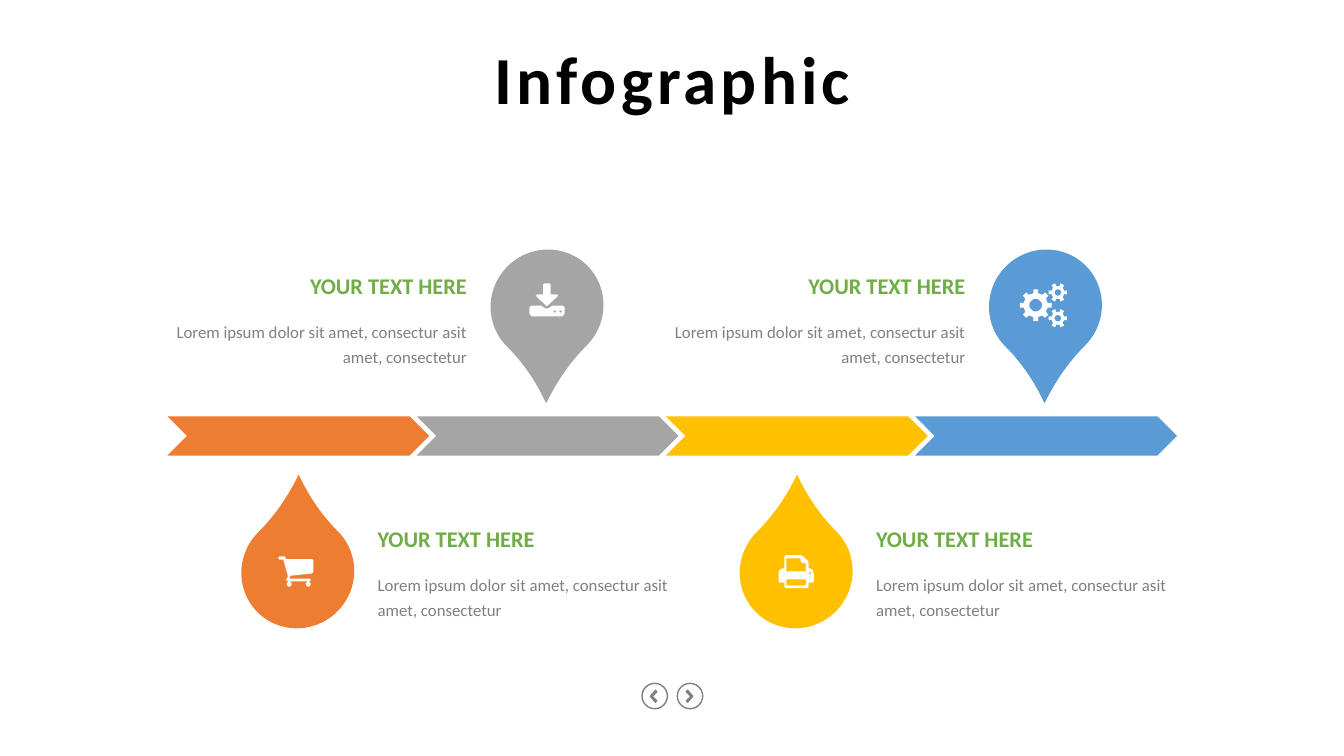
from dataclasses import dataclass
from math import cos, pi, sin

from pptx import Presentation
from pptx.dml.color import RGBColor
from pptx.enum.shapes import MSO_SHAPE
from pptx.enum.text import MSO_ANCHOR, MSO_AUTO_SIZE, PP_ALIGN
from pptx.util import Cm, Pt

CHEVRON, TEARDROP, OVAL = MSO_SHAPE.CHEVRON, MSO_SHAPE.TEAR, MSO_SHAPE.OVAL
LEFT, CENTER, RIGHT = PP_ALIGN.LEFT, PP_ALIGN.CENTER, PP_ALIGN.RIGHT
TOP = MSO_ANCHOR.TOP
NO_AUTOFIT = MSO_AUTO_SIZE.NONE
TITLE_ONLY = 5


@dataclass(frozen=True)
class Theme:
    font: str = "Calibri"
    title: str = "000000"
    heading: str = "70AD47"
    body: str = "808080"
    icon: str = "FFFFFF"
    steps: tuple = ("ED7D31", "A5A5A5", "FFC000", "5B9BD5")
    title_size: int = 48
    heading_size: int = 16
    body_size: int = 12


THEME = Theme()
STEP_PITCH = 6.28
HEADING = "YOUR TEXT HERE"
BODY = "Lorem ipsum dolor sit amet, consectur asit amet, consectetur"


# Icon outlines, in hundredths of a centimetre
def circle(x, y, radius, count=32):
    angles = [2 * pi * i / count for i in range(count)]
    return [(x + radius * cos(a), y + radius * sin(a)) for a in angles]


def gear(x, y, teeth, tip, root):
    profile = ((-0.25, root), (-0.2, tip), (0.2, tip), (0.25, root))
    pitch = 2 * pi / teeth
    return [(x + radius * cos((tooth + offset) * pitch),
             y + radius * sin((tooth + offset) * pitch))
            for tooth in range(teeth) for offset, radius in profile]


CART = [
    [(89, 38), (86, 43), (30, 49), (30, 54), (28, 56), (79, 56), (83, 59),
     (79, 63), (25, 63), (20, 59), (25, 51), (13, 8), (3, 8), (0, 4),
     (3, 0), (17, 0), (20, 7), (86, 7), (89, 10)],
    circle(28, 70, 6), circle(76, 70, 6),
]
DOWNLOAD = [
    [(89, 61), (89, 76), (84, 83), (5, 83), (0, 76), (0, 61), (5, 56),
     (30, 56), (38, 62), (44, 64), (50, 62), (58, 56), (84, 56)],
    [(71, 33), (45, 57), (43, 57), (18, 33), (16, 30), (20, 28), (35, 28),
     (35, 3), (38, 0), (51, 0), (54, 3), (54, 28), (69, 28), (72, 30)],
    circle(64, 71, 3), circle(79, 71, 3),
]
PRINTER = [
    [(0, 66), (0, 46), (3, 37), (10, 33), (15, 33), (15, 4), (19, 0),
     (56, 0), (63, 4), (73, 13), (76, 20), (76, 33), (79, 33), (86, 37),
     (89, 46), (89, 66), (87, 69), (76, 69), (76, 80), (72, 83), (18, 83),
     (15, 80), (15, 69), (2, 69)],
    [(69, 41), (69, 20), (61, 20), (56, 16), (56, 8), (20, 8), (20, 41)],
    [(20, 61), (69, 61), (69, 76), (20, 76)],
    circle(79, 45, 3),
]
GEARS = [
    gear(40, 55, 8, 40, 31), circle(40, 55, 16),
    gear(96, 23, 6, 24, 17), circle(96, 23, 8),
    gear(96, 88, 6, 24, 17), circle(96, 88, 8),
]
NEXT = [[(7, 33), (5, 33), (1, 28), (1, 27), (12, 17), (1, 6), (1, 4),
         (5, 0), (7, 0), (20, 15), (20, 18)]]
PREVIOUS = [[(20 - x, y) for x, y in NEXT[0]]]

# Outline and offset from the drop's left and top, one per step
STEP_ICONS = ((CART, 0.94, 1.02), (DOWNLOAD, 0.99, 0.84),
              (PRINTER, 0.99, 0.99), (GEARS, 0.79, 0.84))


def paint(shape, color):
    shape.shadow.inherit = False
    shape.fill.solid()
    shape.fill.fore_color.rgb = RGBColor.from_string(color)
    shape.line.fill.background()


def add_preset(page, preset, left, top, width, height, color):
    shape = page.shapes.add_shape(
        preset, Cm(left), Cm(top), Cm(width), Cm(height))
    paint(shape, color)
    return shape


def add_icon(page, contours, left, top, color):
    builder = page.shapes.build_freeform(*contours[0][0], scale=Cm(0.01))
    builder.add_line_segments(contours[0][1:], close=True)
    for contour in contours[1:]:
        builder.move_to(*contour[0])
        builder.add_line_segments(contour[1:], close=True)
    paint(builder.convert_to_shape(Cm(left), Cm(top)), color)


def write(box, text, size, color, align, bold=False):
    frame = box.text_frame
    frame.margin_left = frame.margin_right = 0
    frame.margin_top = frame.margin_bottom = 0
    frame.word_wrap = True
    frame.auto_size = NO_AUTOFIT
    frame.vertical_anchor = TOP
    para = frame.paragraphs[0]
    para.text = text
    para.alignment = align
    para.font.name = THEME.font
    para.font.size = Pt(size)
    para.font.bold = bold
    para.font.color.rgb = RGBColor.from_string(color)
    return para


def add_title(page, text):
    box = page.shapes.title
    box.left, box.top, box.width, box.height = (
        Cm(11.15), Cm(0.94), Cm(11.61), Cm(2.06))
    para = write(box, text, THEME.title_size, THEME.title, CENTER, bold=True)
    # Letter spacing of 3 points
    para.runs[0]._r.get_or_add_rPr().set("spc", "300")


def add_caption(page, left, right, top, align):
    def place(width, offset, height):
        start = right - width if align == RIGHT else left
        return page.shapes.add_textbox(
            Cm(start), Cm(top + offset), Cm(width), Cm(height))

    write(place(5.26, 0, 0.69), HEADING, THEME.heading_size, THEME.heading,
          align, bold=True)
    para = write(place(7.65, 1.12, 1.22), BODY, THEME.body_size, THEME.body,
                 align)
    para.line_spacing = 1.25


def add_step(page, index):
    color = THEME.steps[index]
    shift = index * STEP_PITCH
    above = index % 2 == 1
    add_preset(page, CHEVRON, 4.22 + shift, 10.49, 6.6, 0.99, color)

    # Drop pointing at the chevron
    left, top = 6.07 + shift, 6.3 if above else 13
    drop = add_preset(page, TEARDROP, left, top, 2.87, 2.82, color)
    drop.adjustments[0] = 1.22
    drop.rotation = 135 if above else 315
    contours, icon_left, icon_top = STEP_ICONS[index]
    add_icon(page, contours, left + icon_left, top + icon_top, THEME.icon)

    # Caption beside the drop
    add_caption(page, left + 3.45, left - 0.58,
                top + (0.56 if above else 0.23), RIGHT if above else LEFT)


def add_button(page, contours, left):
    ring = add_preset(page, OVAL, left, 17.22, 0.64, 0.64, THEME.body)
    ring.fill.background()
    ring.line.color.rgb = RGBColor.from_string(THEME.body)
    ring.line.width = Pt(1)
    add_icon(page, contours, left + 0.2, 17.38, THEME.body)


def main():
    deck = Presentation()
    deck.slide_width, deck.slide_height = Cm(33.87), Cm(19.05)
    page = deck.slides.add_slide(deck.slide_layouts[TITLE_ONLY])
    add_title(page, "Infographic")
    for index in range(len(THEME.steps)):
        add_step(page, index)
    add_button(page, PREVIOUS, 16.18)
    add_button(page, NEXT, 17.07)
    deck.save("out.pptx")


if __name__ == "__main__":
    main()
